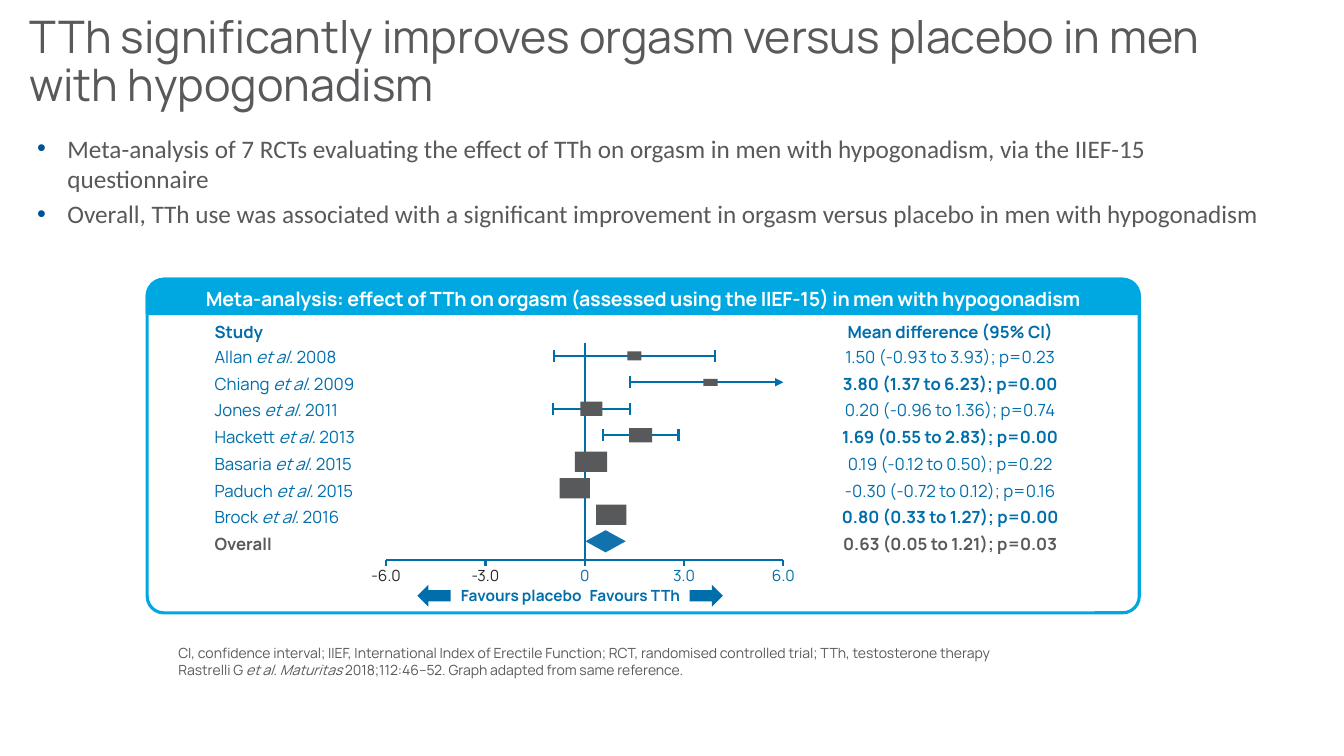
from dataclasses import dataclass

from lxml import etree
from pptx import Presentation
from pptx import util as u
from pptx.dml.color import RGBColor
from pptx.enum import shapes, text
from pptx.oxml import ns


@dataclass(frozen=True)
class Theme:
    """Colours, fonts and type sizes of the slide."""
    grey: str = "58595B"
    blue: str = "006EAB"
    diamond: str = "1272AE"
    cyan: str = "00A8E1"
    bullet: str = "005294"
    dark: str = "272727"
    white: str = "FFFFFF"
    display: str = "Manrope"
    body: str = "Calibri"
    title_size: float = 32
    body_size: float = 18
    banner_size: float = 14
    row_size: float = 12
    axis_size: float = 11
    note_size: float = 10
    rule: float = 1.5
    border: float = 2.25


THEME = Theme()
SHAPE = shapes.MSO_SHAPE
ALIGN = text.PP_ALIGN
ANCHOR = text.MSO_ANCHOR

STUDIES = [
    ("Allan *et al. *2008", 1.50, -0.93, 3.93, 0.23, (0.14, 0.09)),
    ("Chiang *et al. *2009", 3.80, 1.37, 6.23, 0.00, (0.14, 0.07)),
    ("Jones *et al. *2011", 0.20, -0.96, 1.36, 0.74, (0.22, 0.14)),
    ("Hackett *et al. *2013", 1.69, 0.55, 2.83, 0.00, (0.23, 0.14)),
    ("Basaria *et al. *2015", 0.19, -0.12, 0.50, 0.22, (0.32, 0.2)),
    ("Paduch *et al. *2015", -0.30, -0.72, 0.12, 0.16, (0.3, 0.2)),
    ("Brock *et al. *2016", 0.80, 0.33, 1.27, 0.00, (0.3, 0.2)),
    ("Overall", 0.63, 0.05, 1.21, 0.03, (0.4, 0.22)),
]


def rgb(code):
    """Return the colour for a hex code."""
    return RGBColor.from_string(code)


def inches(*lengths):
    """Convert several lengths to Inches."""
    return [u.Inches(length) for length in lengths]


def style(paragraph, size, color, face=THEME.display, bold=False):
    """Set the font of a whole paragraph."""
    font = paragraph.font
    font.size, font.name, font.bold = u.Pt(size), face, bold
    font.color.rgb = rgb(color)


def write(paragraph, wording):
    """Add runs, with the wording between asterisks in italics."""
    for index, part in enumerate(wording.split("*")):
        run = paragraph.add_run()
        run.text = part
        if index % 2:
            run.font.italic = True


def text_box(slide, box, lines, wrap=False, anchor=ANCHOR.TOP):
    """Add a text box and return its paragraphs."""
    frame = slide.shapes.add_textbox(*inches(*box)).text_frame
    frame.word_wrap, frame.vertical_anchor = wrap, anchor
    for index, line in enumerate(lines):
        paragraph = frame.add_paragraph() if index else frame.paragraphs[0]
        write(paragraph, line)
    return frame.paragraphs


def label(slide, box, wording, size, color, bold=False, align=ALIGN.CENTER):
    """Add a one-line label."""
    paragraph, = text_box(slide, box, [wording], anchor=ANCHOR.MIDDLE)
    paragraph.alignment = align
    style(paragraph, size, color, bold=bold)


def block(slide, kind, box, fill=None, line=None):
    """Add a preset shape with an optional fill and outline."""
    shape = slide.shapes.add_shape(kind, *inches(*box))
    shape.shadow.inherit = False
    if fill:
        shape.fill.solid()
        shape.fill.fore_color.rgb = rgb(fill)
    else:
        shape.fill.background()
    if line:
        shape.line.color.rgb = rgb(line)
        shape.line.width = u.Pt(THEME.border)
    else:
        shape.line.fill.background()
    return shape


def rule(slide, x1, y1, x2, y2, arrow=False):
    """Draw a straight line, with an arrowhead at its end if asked."""
    line = slide.shapes.add_connector(
        shapes.MSO_CONNECTOR.STRAIGHT, *inches(x1, y1, x2, y2))
    line.line.color.rgb = rgb(THEME.blue)
    line.line.width = u.Pt(THEME.rule)
    if arrow:
        etree.SubElement(line.line._get_or_add_ln(), ns.qn("a:tailEnd"), type="triangle")
    etree.SubElement(line._element.spPr, ns.qn("a:effectLst"))


def add_title(slide, box):
    """Place the slide title."""
    title, = text_box(slide, box, [
        "TTh significantly improves orgasm versus placebo in men with hypogonadism"],
        True, ANCHOR.MIDDLE)
    title.line_spacing = 0.9
    style(title, THEME.title_size, THEME.grey)


def add_summary(slide, box):
    """Place the bulleted summary."""
    points = text_box(slide, box, [
        "Meta-analysis of 7 RCTs evaluating the effect of TTh on orgasm in men with "
        "hypogonadism, via the IIEF-15 questionnaire",
        "Overall, TTh use was associated with a significant improvement in orgasm "
        "versus placebo in men with hypogonadism"], True)
    for index, point in enumerate(points):
        properties = point._p.get_or_add_pPr()
        properties.set("marL", str(u.Inches(0.3)))
        properties.set("indent", str(u.Inches(-0.3)))
        color = etree.SubElement(properties, ns.qn("a:buClr"))
        etree.SubElement(color, ns.qn("a:srgbClr"), val=THEME.bullet)
        etree.SubElement(properties, ns.qn("a:buFont"), typeface="Arial")
        etree.SubElement(properties, ns.qn("a:buChar"), char="•")
        if index:
            point.space_before = u.Pt(3.6)
        style(point, THEME.body_size, THEME.grey, THEME.body)


def add_panel(slide, box):
    """Place the framed panel with its banner, columns and forest plot."""
    left, top, width, height = box
    block(slide, SHAPE.ROUNDED_RECTANGLE, box, line=THEME.cyan).adjustments[0] = 0.05
    add_column(slide, (left + 0.57, top + 0.37, 2.01, 2.42), "Study",
               [study[0] for study in STUDIES], ALIGN.LEFT, ["Overall"])
    results = [f"{mean:.2f} ({low:.2f} to {high:.2f}); p={p:.2f}"
               for _, mean, low, high, p, _ in STUDIES]
    significant = [result for result, study in zip(results, STUDIES) if study[4] < 0.05]
    add_column(slide, (left + 6.57, top + 0.37, 2.79, 2.42), "Mean difference (95% CI)",
               results, ALIGN.CENTER, significant)
    add_forest(slide, (left + 2.37, top + 0.63, 3.94, 2.16))
    banner = block(slide, SHAPE.ROUND_2_SAME_RECTANGLE, (left, top, width, 0.34),
                   THEME.cyan, THEME.cyan)
    banner.adjustments[0] = 0.5
    banner.text_frame.vertical_anchor = ANCHOR.MIDDLE
    heading = banner.text_frame.paragraphs[0]
    heading.alignment = ALIGN.CENTER
    write(heading, "Meta-analysis: effect of TTh on orgasm (assessed using the IIEF-15) "
                   "in men with hypogonadism")
    heading.runs[0]._r.get_or_add_rPr().set("spc", "-20")
    style(heading, THEME.banner_size, THEME.white, bold=True)


def add_column(slide, box, heading, rows, align, bold_rows):
    """Place a column of study rows below its heading."""
    left, top, width, height = box
    label(slide, (left, top, width, 0.3), heading, THEME.row_size, THEME.blue, True, align)
    entries = text_box(slide, (left, top + 0.24, width, height - 0.24), rows)
    for index, (entry, row) in enumerate(zip(entries, rows)):
        color = THEME.grey if index == len(rows) - 1 else THEME.blue
        entry.alignment, entry.line_spacing, entry.space_after = align, 1.05, u.Pt(4)
        style(entry, THEME.row_size, color, bold=row in bold_rows)


def add_forest(slide, box):
    """Draw the forest plot on an axis from -6 to 6."""
    left, top, width, height = box
    bottom, zero, unit = top + height, left + width / 2, width / 12
    rule(slide, left, bottom, left + width, bottom)
    for tick, wording in zip(range(-6, 7, 3), ("-6.0", "-3.0", "0", "3.0", "6.0")):
        x = zero + tick * unit
        rule(slide, x, bottom if tick else top, x, bottom + 0.06)
        label(slide, (x - 0.29, bottom, 0.58, 0.29), wording, THEME.axis_size,
              THEME.dark if tick < 0 else THEME.blue)

    pitch = 1.84 / (len(STUDIES) - 1)
    for row, (name, mean, low, high, _, (wide, tall)) in enumerate(STUDIES):
        y, x = top + 0.13 + row * pitch, zero + mean * unit
        start, end = zero + low * unit, zero + min(high, 6) * unit
        if row < 4:
            rule(slide, start, y, end, y, arrow=high > 6)
            for cap in [start] if high > 6 else [start, end]:
                rule(slide, cap, y - 0.06, cap, y + 0.06)
        overall = name == "Overall"
        block(slide, SHAPE.DIAMOND if overall else SHAPE.RECTANGLE,
              (x - wide / 2, y - tall / 2, wide, tall),
              THEME.diamond if overall else THEME.grey)

    for wording, x, wide, align, kind, arrow_x in (
            ("Favours placebo", 0.3, 1.74, ALIGN.RIGHT, SHAPE.LEFT_ARROW, 0.31),
            ("Favours TTh", 1.92, 1.29, ALIGN.LEFT, SHAPE.RIGHT_ARROW, 3.01)):
        label(slide, (left + x, bottom + 0.2, wide, 0.29), wording,
              THEME.axis_size, THEME.blue, True, align)
        block(slide, kind, (left + arrow_x, bottom + 0.24, 0.33, 0.22), THEME.blue)


def add_notes(slide, box):
    """Place the abbreviations and the reference."""
    for note in text_box(slide, box, [
            "CI, confidence interval; IIEF, International Index of Erectile Function; "
            "RCT, randomised controlled trial; TTh, testosterone therapy",
            "Rastrelli G *et al. Maturitas* 2018;112:46–52. Graph adapted from same "
            "reference."], True, ANCHOR.BOTTOM):
        style(note, THEME.note_size, THEME.grey)


def main():
    """Build and save the slide."""
    deck = Presentation()
    deck.slide_width, deck.slide_height = inches(13.33, 7.5)
    slide = deck.slides.add_slide(deck.slide_layouts[6])
    add_title(slide, (0.19, 0.17, 12.46, 0.91))
    add_summary(slide, (0.27, 1.27, 12.38, 1.36))
    add_panel(slide, (1.46, 2.77, 9.84, 3.31))
    add_notes(slide, (1.67, 6.34, 10, 0.44))
    deck.save("out.pptx")


if __name__ == "__main__":
    main()
